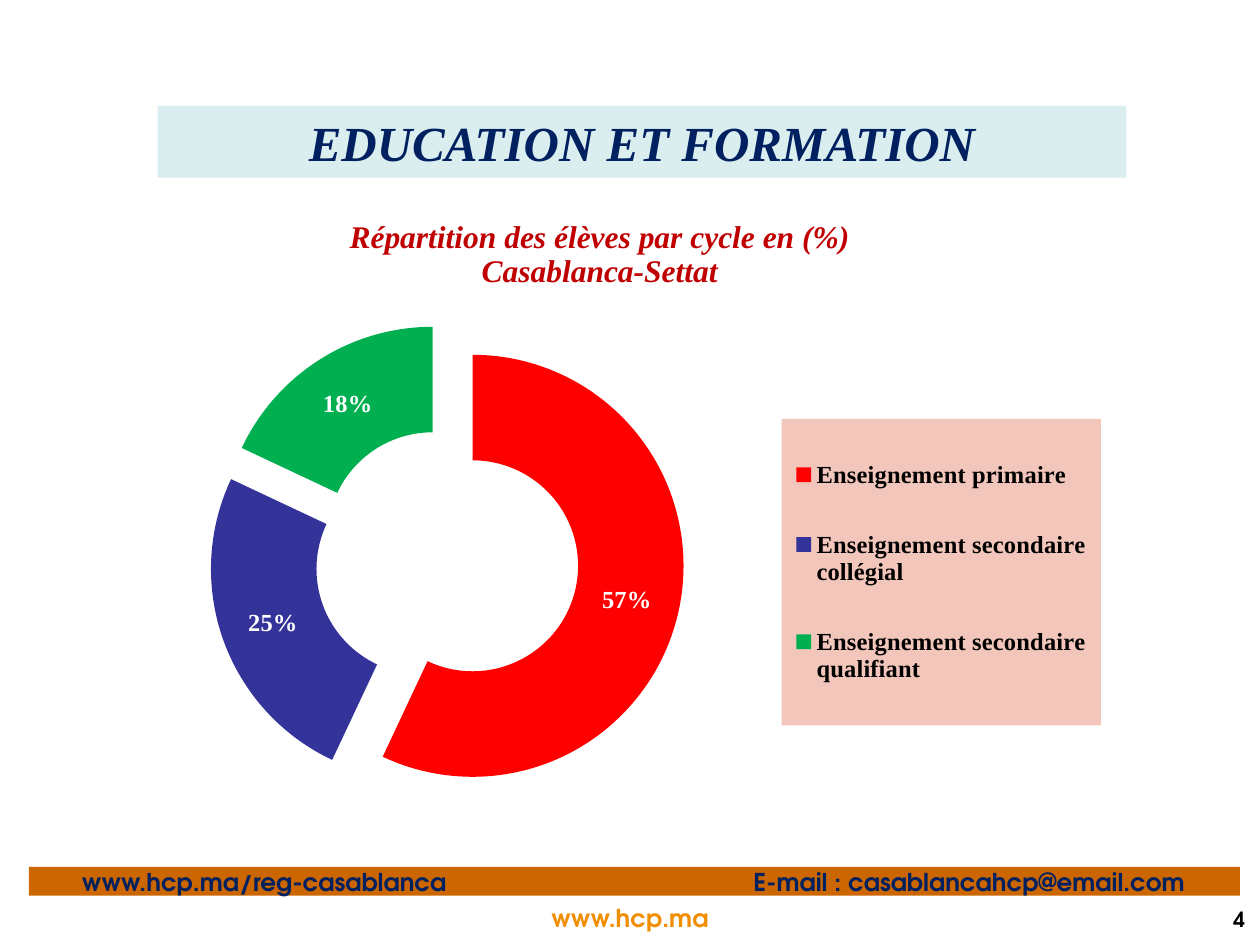
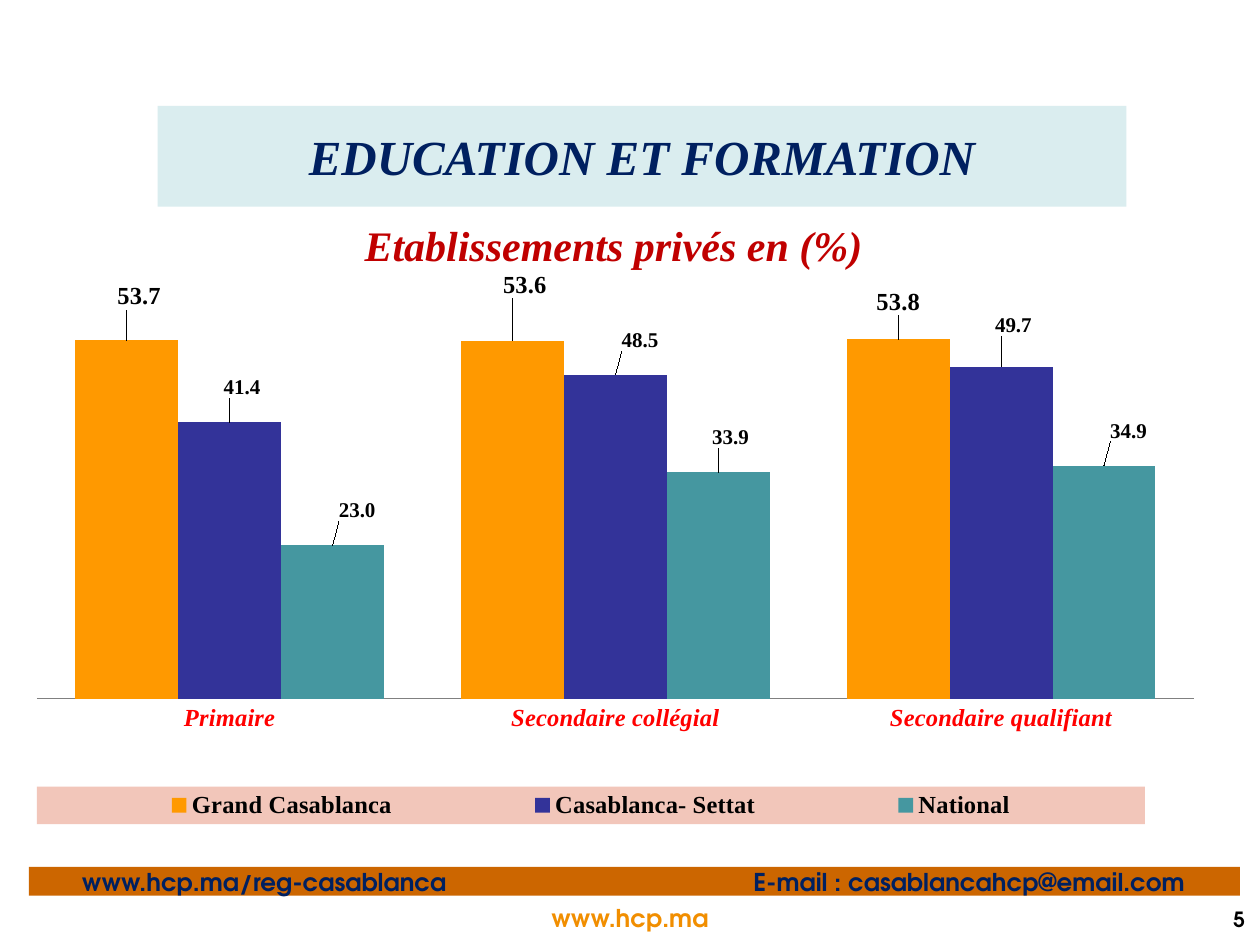
from dataclasses import dataclass
from typing import Optional

from pptx import Presentation
from pptx.chart.chart import Chart
from pptx.chart.data import CategoryChartData
from pptx.dml.color import RGBColor
from pptx.enum.chart import (XL_CHART_TYPE, XL_LABEL_POSITION, XL_LEGEND_POSITION,
                             XL_TICK_LABEL_POSITION, XL_TICK_MARK)
from pptx.enum.shapes import MSO_SHAPE
from pptx.enum.text import MSO_ANCHOR, MSO_AUTO_SIZE, PP_ALIGN
from pptx.oxml import parse_xml
from pptx.oxml.ns import nsdecls, qn
from pptx.util import Inches, Pt


@dataclass(frozen=True)
class Theme:
    serif: str = "Times New Roman"
    sans: str = "TeX Gyre Adventor"
    navy: str = "002060"
    title_fill: str = "DAEDEF"
    footer_fill: str = "CC6600"
    site: str = "F18E00"
    heading: str = "C00000"
    legend_fill: str = "F2C6BA"
    axis: str = "808080"
    red: str = "FF0000"
    blue: str = "333399"
    green: str = "00B050"
    orange: str = "FF9900"
    teal: str = "4597A0"
    black: str = "000000"
    white: str = "FFFFFF"
    title_size: int = 28
    body_size: int = 14
    small_size: int = 12
    chart_size: int = 10


T = Theme()


@dataclass(frozen=True)
class Box:
    left: float
    top: float
    width: float
    height: float

    def inches(self) -> tuple:
        return tuple(Inches(v) for v in (self.left, self.top, self.width, self.height))


@dataclass(frozen=True)
class ChartFrame:
    """Place of a chart on the slide, and of its parts as fractions of the chart."""
    box: Box
    heading: tuple[str, ...]
    heading_size: int
    heading_at: tuple[float, float]
    plot: Box
    legend: Box
    legend_position: XL_LEGEND_POSITION


@dataclass(frozen=True)
class Region:
    name: str
    values: tuple[float, ...]
    color: str
    label_size: int
    label_shifts: tuple[tuple[float, float], ...]


@dataclass(frozen=True)
class Cycle:
    name: str
    share: int
    color: str


CYCLES = (
    Cycle("Enseignement primaire", 57, T.red),
    Cycle("Enseignement secondaire collégial", 25, T.blue),
    Cycle("Enseignement secondaire qualifiant", 18, T.green),
)
LEVELS = ("Primaire", "Secondaire collégial", "Secondaire qualifiant")
REGIONS = (
    Region("Grand Casablanca", (53.7, 53.6, 53.8), T.orange, T.body_size,
           ((0.01, -0.04), (0.01, -0.06), (0, -0.03))),
    Region("Casablanca- Settat", (41.4, 48.5, 49.7), T.blue, T.small_size,
           ((0.01, -0.03), (0.02, -0.03), (0.01, -0.04))),
    Region("National", (23, 33.9, 34.9), T.teal, T.small_size,
           ((0.02, -0.03), (0.01, -0.03), (0.02, -0.03))),
)
CYCLE_FRAME = ChartFrame(
    Box(0.55, 1.56, 8.44, 4.77),
    ("Répartition des élèves par cycle en (%)", "Casablanca-Settat"), 18, (0.26, 0.03),
    Box(0.13, 0.21, 0.45, 0.79), Box(0.67, 0.37, 0.3, 0.51), XL_LEGEND_POSITION.TOP)
PRIVATE_FRAME = ChartFrame(
    Box(0, 1.67, 9.77, 4.97), ("Etablissements privés en (%)",), 24, (0.29, 0),
    Box(0.03, 0.14, 0.94, 0.64), Box(0.03, 0.92, 0.9, 0.06), XL_LEGEND_POSITION.BOTTOM)


def style_font(font, size: int, color: str = T.black, name: str = T.serif,
               bold: bool = True, italic: bool = False) -> None:
    formats = {"size": Pt(size), "name": name, "bold": bold, "italic": italic}
    for key, value in formats.items():
        setattr(font, key, value)
    font.color.rgb = RGBColor.from_string(color)


def fill_solid(target, color: str) -> None:
    target.fill.solid()
    target.fill.fore_color.rgb = RGBColor.from_string(color)


def add_label(s, box: Box, text: str, size: int, color: str, align: PP_ALIGN) -> None:
    tf = s.shapes.add_textbox(*box.inches()).text_frame
    tf.word_wrap = True
    tf.vertical_anchor = MSO_ANCHOR.MIDDLE
    p = tf.paragraphs[0]
    p.text = text
    p.alignment = align
    style_font(p.font, size, color, T.sans)


def add_contact_band(s) -> None:
    sp = s.shapes.add_shape(MSO_SHAPE.RECTANGLE, *Box(0.23, 6.88, 9.61, 0.23).inches())
    sp.shadow.inherit = False
    fill_solid(sp, T.footer_fill)
    sp.line.fill.background()
    tf = sp.text_frame
    formats = {"margin_left": Inches(0.42), "margin_right": 0, "margin_top": 0,
               "margin_bottom": 0, "vertical_anchor": MSO_ANCHOR.MIDDLE}
    for key, value in formats.items():
        setattr(tf, key, value)
    p = tf.paragraphs[0]
    p.text = "www.hcp.ma/reg-casablanca\tE-mail : casablancahcp@email.com"
    p.alignment = PP_ALIGN.LEFT
    p._p.get_or_add_pPr().append(parse_xml(
        f'<a:tabLst {nsdecls("a")}><a:tab pos="{Inches(5.33)}" algn="l"/></a:tabLst>'))
    style_font(p.font, T.body_size, T.navy, T.sans)


def add_slide(prs, number: int, title_height: float):
    """Add a slide with the shared title, contact band, site and number."""
    s = prs.slides.add_slide(prs.slide_layouts[5])
    title = s.shapes.title
    title.left, title.top, title.width, title.height = Box(
        1.25, 0.84, 7.69, title_height).inches()
    fill_solid(title, T.title_fill)
    tf = title.text_frame
    tf.auto_size = MSO_AUTO_SIZE.NONE
    tf.vertical_anchor = MSO_ANCHOR.MIDDLE
    p = tf.paragraphs[0]
    p.text = "EDUCATION ET FORMATION"
    p.alignment = PP_ALIGN.CENTER
    style_font(p.font, T.title_size, T.navy, italic=True)
    add_contact_band(s)
    add_label(s, Box(3.82, 7.12, 2.36, 0.33), "www.hcp.ma", T.body_size, T.site,
              PP_ALIGN.CENTER)
    add_label(s, Box(8.46, 7.12, 1.52, 0.35), str(number), T.small_size, T.black,
              PP_ALIGN.RIGHT)
    return s


def set_layout(parent, after: Optional[str], x: float, y: float,
               size: Optional[tuple[float, float]] = None,
               inner: bool = False, edge: bool = True) -> None:
    """Give a chart part a manual layout, placed after the named child."""
    for old in parent.findall(qn("c:layout")):
        parent.remove(old)
    values = [("layoutTarget", "inner")] if inner else []
    if edge:
        values += [("xMode", "edge"), ("yMode", "edge")]
    values += [("x", x), ("y", y)]
    if size:
        values += zip("wh", size)
    body = "".join(f'<c:{tag} val="{value}"/>' for tag, value in values)
    layout = parse_xml(f'<c:layout {nsdecls("c")}><c:manualLayout>{body}'
                       '</c:manualLayout></c:layout>')
    if after:
        parent.find(qn(after)).addnext(layout)
    else:
        parent.insert(0, layout)


def hide_leader_lines(labels) -> None:
    labels.append(parse_xml(
        f'<c:extLst {nsdecls("c")}><c:ext uri="{{CE6537A1-D6FC-4f65-9D91-7224C49458BB}}" '
        'xmlns:c15="http://schemas.microsoft.com/office/drawing/2012/chart">'
        '<c15:showLeaderLines val="0"/></c:ext></c:extLst>'))


def add_framed_chart(s, kind: XL_CHART_TYPE, data: CategoryChartData,
                     frame: ChartFrame) -> Chart:
    """Add a chart with the shared heading and legend style."""
    chart = s.shapes.add_chart(kind, *frame.box.inches(), data).chart
    style_font(chart.font, T.chart_size, name=T.sans, bold=False)
    chart.has_title = True
    tf = chart.chart_title.text_frame
    for i, line in enumerate(frame.heading):
        p = tf.add_paragraph() if i else tf.paragraphs[0]
        r = p.add_run()
        r.text = line
        style_font(r.font, frame.heading_size, T.heading, italic=True)
    chart.has_legend = True
    chart.legend.position = frame.legend_position
    chart.legend.include_in_layout = False
    style_font(chart.legend.font, T.body_size)

    root = chart.element.find(qn("c:chart"))
    legend = root.find(qn("c:legend"))
    legend.find(qn("c:txPr")).addprevious(parse_xml(
        f'<c:spPr {nsdecls("c", "a")}><a:solidFill>'
        f'<a:srgbClr val="{T.legend_fill}"/></a:solidFill></c:spPr>'))
    set_layout(root.find(qn("c:title")), "c:tx", *frame.heading_at)
    for part, after, box, inner in (
            (root.find(qn("c:plotArea")), None, frame.plot, True),
            (legend, "c:legendPos", frame.legend, False)):
        set_layout(part, after, box.left, box.top, (box.width, box.height), inner)
    return chart


def add_cycle_doughnut(s) -> None:
    data = CategoryChartData()
    data.categories = [c.name for c in CYCLES]
    data.add_series("Series 1", [c.share for c in CYCLES])
    plot = add_framed_chart(s, XL_CHART_TYPE.DOUGHNUT, data, CYCLE_FRAME).plots[0]
    plot.vary_by_categories = True
    series = plot.series[0]
    for i, cycle in enumerate(CYCLES):
        fill_solid(series.points[i].format, cycle.color)
    series._element.find(qn("c:dPt")).addprevious(
        parse_xml(f'<c:explosion {nsdecls("c")} val="25"/>'))
    labels = series.data_labels
    formats = {"show_percentage": True, "show_value": False, "number_format": "0%",
               "number_format_is_linked": False}
    for key, value in formats.items():
        setattr(labels, key, value)
    style_font(labels.font, T.body_size, T.white)


def style_axes(chart: Chart) -> None:
    value_axis, category_axis = chart.value_axis, chart.category_axis
    formats = {"visible": False, "has_major_gridlines": False,
               "minimum_scale": 0, "maximum_scale": 60}
    for key, value in formats.items():
        setattr(value_axis, key, value)
    category_axis.major_tick_mark = XL_TICK_MARK.NONE
    category_axis.tick_label_position = XL_TICK_LABEL_POSITION.NEXT_TO_AXIS
    category_axis.format.line.color.rgb = RGBColor.from_string(T.axis)
    style_font(category_axis.tick_labels.font, T.body_size, T.red, italic=True)


def add_private_columns(s) -> None:
    data = CategoryChartData(number_format="0.0")
    data.categories = LEVELS
    for region in REGIONS:
        data.add_series(region.name, region.values)
    chart = add_framed_chart(s, XL_CHART_TYPE.COLUMN_CLUSTERED, data, PRIVATE_FRAME)
    style_axes(chart)
    plot = chart.plots[0]
    for key, value in {"vary_by_categories": False, "gap_width": 75, "overlap": 0}.items():
        setattr(plot, key, value)
    for series, region in zip(plot.series, REGIONS):
        fill_solid(series.format, region.color)
        labels = series.data_labels
        formats = {"show_value": True, "number_format": "0.0",
                   "number_format_is_linked": False,
                   "position": XL_LABEL_POSITION.OUTSIDE_END}
        for key, value in formats.items():
            setattr(labels, key, value)
        style_font(labels.font, region.label_size)
        for i in range(len(LEVELS)):
            label = series.points[i].data_label
            style_font(label.font, region.label_size)
            label.position = XL_LABEL_POSITION.OUTSIDE_END
        for label, shift in zip(series._element.xpath("c:dLbls/c:dLbl"),
                                region.label_shifts):
            set_layout(label, "c:idx", *shift, edge=False)
        hide_leader_lines(series._element.find(qn("c:dLbls")))


def main() -> None:
    prs = Presentation()
    prs.slide_width, prs.slide_height = Inches(10), Inches(7.5)
    add_cycle_doughnut(add_slide(prs, 4, 0.57))
    add_private_columns(add_slide(prs, 5, 0.8))
    prs.save("out.pptx")


if __name__ == "__main__":
    main()
